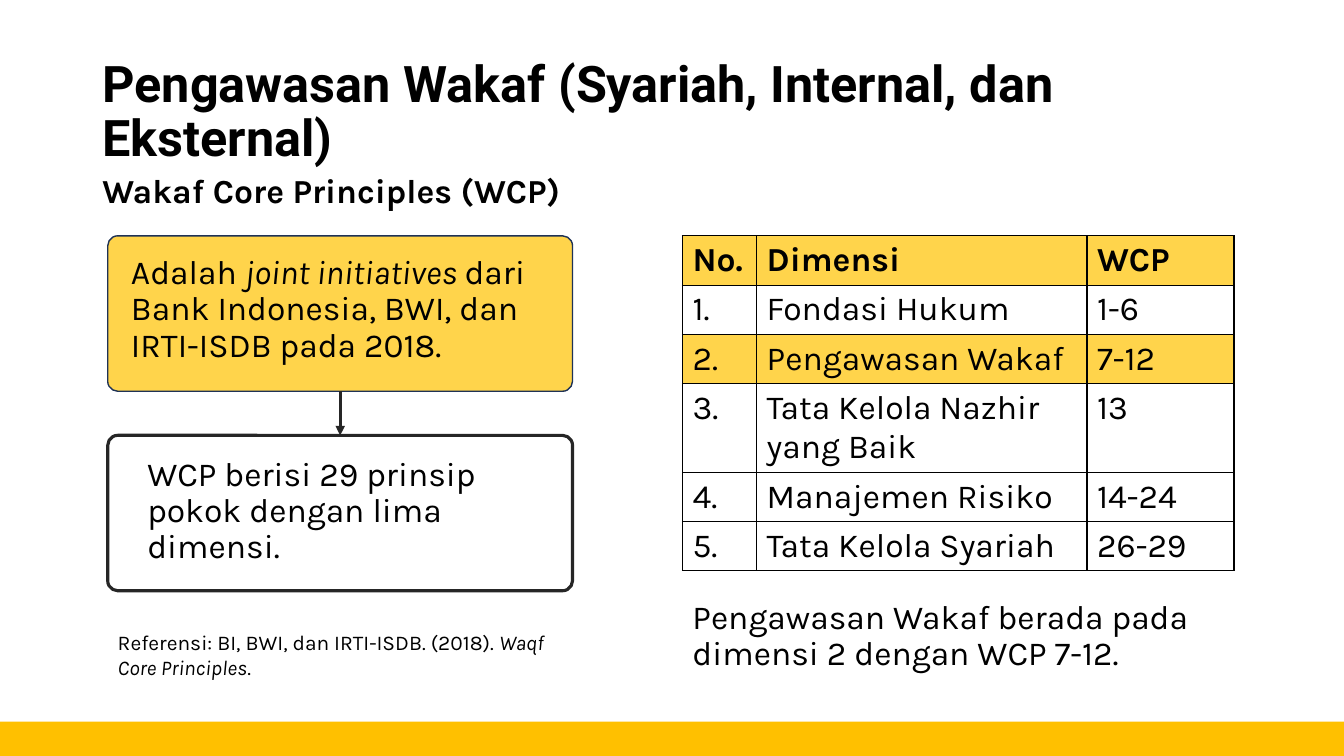
from lxml import etree
from pptx import Presentation
from pptx.dml.color import RGBColor
from pptx.enum.shapes import MSO_CONNECTOR, MSO_SHAPE
from pptx.enum.text import MSO_ANCHOR, MSO_AUTO_SIZE, PP_ALIGN
from pptx.oxml.ns import qn
from pptx.util import Pt

RECTANGLE = MSO_SHAPE.RECTANGLE
ROUNDED = MSO_SHAPE.ROUNDED_RECTANGLE
STRAIGHT = MSO_CONNECTOR.STRAIGHT
MIDDLE, TOP = MSO_ANCHOR.MIDDLE, MSO_ANCHOR.TOP
LEFT = PP_ALIGN.LEFT
NO_FIT = MSO_AUTO_SIZE.NONE

COLORS = {
    name: RGBColor.from_string(value)
    for name, value in {
        "black": "000000", "white": "FFFFFF", "bar": "FFC000",
        "yellow": "FFD44B", "navy": "1E3256", "charcoal": "262626",
    }.items()
}


def write(box, spans, size=24, bold=False, font="Karla", spacing=0.9, before=10, anchor=TOP):
    """Fill a box with one paragraph of (text, italic) spans."""
    frame = box.text_frame
    frame.word_wrap = True
    frame.auto_size = NO_FIT
    frame.vertical_anchor = anchor
    para = frame.paragraphs[0]
    para.alignment = LEFT
    para.line_spacing = spacing
    para.space_before = Pt(before)
    para.font.name = font
    para.font.size = Pt(size)
    para.font.bold = bold
    para.font.color.rgb = COLORS["black"]
    for text, italic in spans:
        span = para.add_run()
        span.text = text
        if italic:
            span.font.italic = True
    return para


def place(shape, left, top, width, height):
    shape.left, shape.top = Pt(left), Pt(top)
    shape.width, shape.height = Pt(width), Pt(height)


deck = Presentation()
deck.slide_width, deck.slide_height = Pt(960), Pt(540)
page = deck.slides.add_slide(deck.slide_layouts[1])
shapes = page.shapes
title, body = page.placeholders

# Title and bottom bar
place(title, 66, 29, 828, 104)
write(title, [("Pengawasan Wakaf (Syariah, Internal, dan Eksternal)", False)],
      size=36, bold=True, font="Roboto", before=0, anchor=MIDDLE)

bar = shapes.add_shape(RECTANGLE, 0, Pt(515.5), Pt(960), Pt(24.5))
bar.shadow.inherit = False
bar.fill.solid()
bar.fill.fore_color.rgb = COLORS["bar"]
bar.line.fill.background()

# Two cards joined by an arrow
cards = []
for top, fill, outline, weight in [
    (168.5, "yellow", "navy", 1),
    (311, "white", "charcoal", 2.25),
]:
    card = shapes.add_shape(ROUNDED, Pt(77), Pt(top), Pt(332), Pt(111))
    card.adjustments[0] = 0.064
    card.shadow.inherit = False
    card.fill.solid()
    card.fill.fore_color.rgb = COLORS[fill]
    card.line.color.rgb = COLORS[outline]
    card.line.width = Pt(weight)
    body.element.addprevious(card.element)
    cards.append(card)

arrow = shapes.add_connector(STRAIGHT, Pt(243), Pt(279.5), Pt(243), Pt(311))
arrow.begin_connect(cards[0], 2)
arrow.end_connect(cards[1], 0)
arrow.line.color.rgb = COLORS["charcoal"]
arrow.line.width = Pt(2.25)
properties = arrow.element.spPr
etree.SubElement(properties.find(qn("a:ln")), qn("a:tailEnd"), type="triangle")
etree.SubElement(properties, qn("a:effectLst"))

# Body text on the lower card
place(body, 98, 323, 291, 91)
para = write(body, [("WCP berisi 29 prinsip pokok dengan lima dimensi.", False)])
bullet = para._p.get_or_add_pPr()
bullet.set("marL", "0")
bullet.set("indent", "0")
bullet.insert_element_before(bullet.makeelement(qn("a:buNone")), "a:tabLst", "a:defRPr", "a:extLst")

# Free text
PLAIN = {"spacing": 1.0, "before": 0}
for area, spans, style in [
    ((66, 118, 354, 36), [("Wakaf Core Principles (WCP)", False)], {"bold": True, **PLAIN}),
    ((86.5, 179, 313, 89),
     [("Adalah ", False), ("joint initiatives ", True),
      ("dari Bank Indonesia, BWI, dan IRTI-ISDB pada 2018.", False)], {}),
    ((77, 446, 332, 44),
     [("Referensi: BI, BWI, dan IRTI-ISDB. (2018). ", False),
      ("Waqf Core Principles", True), (".", False)], {"size": 15, **PLAIN}),
    ((487.5, 425, 394, 63),
     [("Pengawasan Wakaf berada pada dimensi 2 dengan WCP 7-12.", False)], {}),
]:
    write(shapes.add_textbox(*map(Pt, area)), spans, **style)

# Table of dimensions
ROWS = [
    ("No.", "Dimensi", "WCP"),
    ("1.", "Fondasi Hukum", "1-6"),
    ("2.", "Pengawasan Wakaf", "7-12"),
    ("3.", "Tata Kelola Nazhir yang Baik", "13"),
    ("4.", "Manajemen Risiko", "14-24"),
    ("5.", "Tata Kelola Syariah", "26-29"),
]
HEIGHTS = [35.2, 35.2, 35.2, 63.2, 35.2, 35.2]
HIGHLIGHTED = (0, 2)
table = shapes.add_table(len(ROWS), 3, Pt(487.5), Pt(168.5), Pt(394), Pt(sum(HEIGHTS))).table
table.first_row = table.horz_banding = False
for column, width in zip(table.columns, (53, 236, 105)):
    column.width = Pt(width)
for row_index, (values, height) in enumerate(zip(ROWS, HEIGHTS)):
    table.rows[row_index].height = Pt(height)
    for column_index, value in enumerate(values):
        cell = table.cell(row_index, column_index)
        para = cell.text_frame.paragraphs[0]
        para.text = value
        para.font.name = "Karla"
        para.font.size = Pt(24)
        para.font.bold = row_index == 0
        para.font.color.rgb = COLORS["black"]
        cell_properties = cell._tc.get_or_add_tcPr()
        for side in ("lnL", "lnR", "lnT", "lnB"):
            border = etree.SubElement(cell_properties, qn(f"a:{side}"), w=str(Pt(1)))
            paint = etree.SubElement(border, qn("a:solidFill"))
            etree.SubElement(paint, qn("a:srgbClr"), val=str(COLORS["black"]))
        if row_index in HIGHLIGHTED:
            cell.fill.solid()
            cell.fill.fore_color.rgb = COLORS["yellow"]
        else:
            cell.fill.background()

deck.save("out.pptx")
